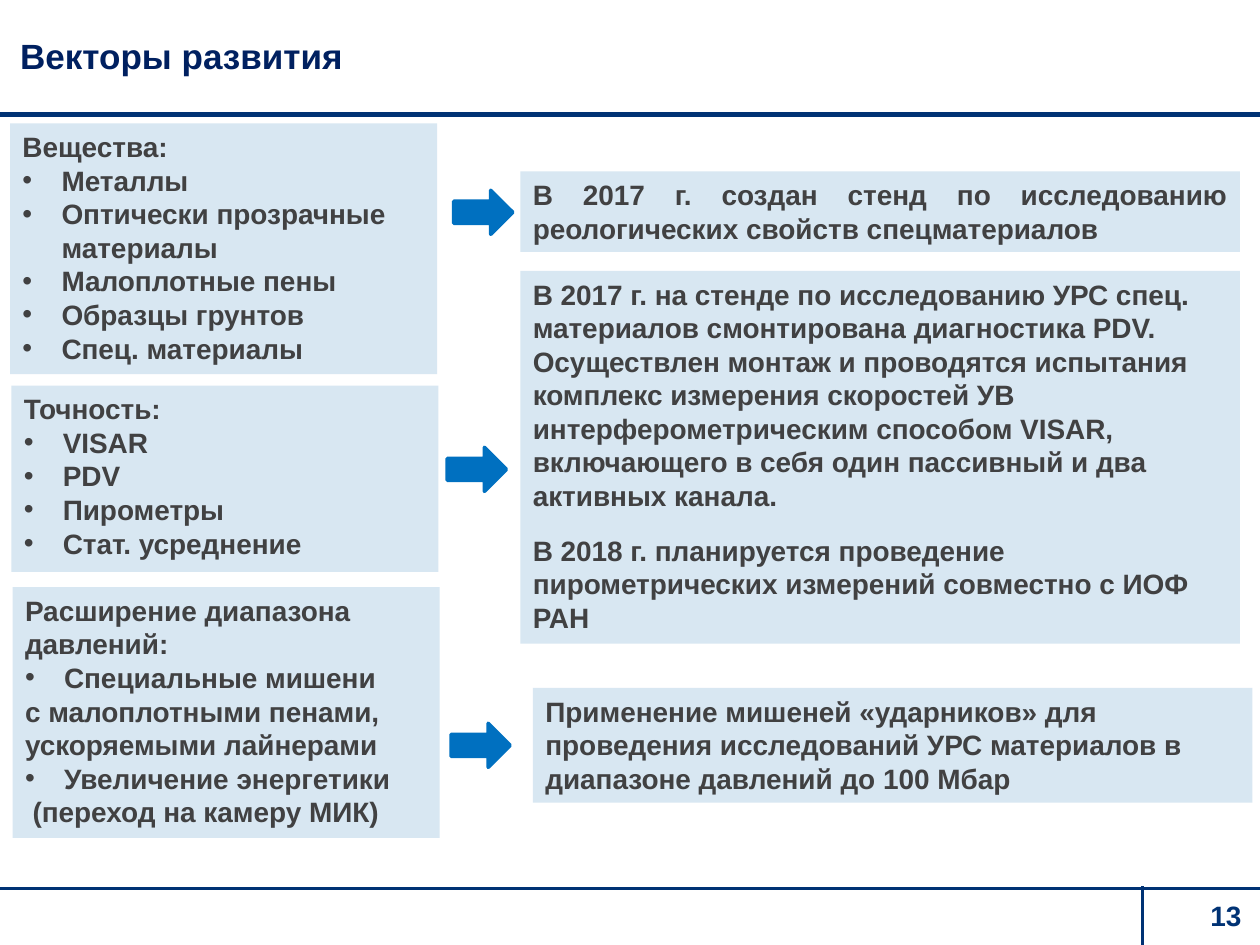
import pptx
import pptx.util
import pptx.dml.color
import pptx.enum.shapes
import pptx.enum.text
import pptx.oxml
import pptx.oxml.ns
from lxml import etree

Inches, Pt = pptx.util.Inches, pptx.util.Pt
RGBColor = pptx.dml.color.RGBColor
SHAPE = pptx.enum.shapes.MSO_SHAPE
ALIGN = pptx.enum.text.PP_ALIGN
ANCHOR = pptx.enum.text.MSO_ANCHOR
qn = pptx.oxml.ns.qn

NAVY = RGBColor(0x00, 0x32, 0x74)
TITLE = RGBColor(0x00, 0x20, 0x60)
PALE = RGBColor(0xD8, 0xE7, 0xF2)
GREY = RGBColor(0x41, 0x41, 0x42)
BLUE = RGBColor(0x00, 0x70, 0xC0)

SHADOW = (
    f'<a:effectLst {pptx.oxml.ns.nsdecls("a")}>'
    '<a:outerShdw blurRad="0" dist="25400" dir="2700000">'
    '<a:srgbClr val="8497B0"/></a:outerShdw></a:effectLst>'
)
INDENT = 0.31
LEFT_WIDTH, RIGHT_WIDTH = 3.39, 5.71

# Each line is (kind, text); kinds are "plain", "bullet" and "inset".
TOPICS = [
    (0.08, 0.98, 1.99, [
        ("plain", "Вещества:"),
        ("bullet", "Металлы"),
        ("bullet", "Оптически прозрачные материалы"),
        ("bullet", "Малоплотные пены"),
        ("bullet", "Образцы грунтов"),
        ("bullet", "Спец. материалы"),
    ]),
    (0.09, 3.06, 1.48, [
        ("plain", "Точность:"),
        ("bullet", "VISAR"),
        ("bullet", "PDV"),
        ("bullet", "Пирометры"),
        ("bullet", "Стат. усреднение"),
    ]),
    (0.1, 4.66, 1.99, [
        ("plain", "Расширение диапазона давлений:"),
        ("bullet", "Специальные мишени"),
        ("plain", "с малоплотными пенами,"),
        ("plain", "ускоряемыми лайнерами"),
        ("bullet", "Увеличение энергетики"),
        ("inset", "(переход на камеру МИК)"),
    ]),
]
RESULTS = [
    (4.13, 1.36, 0.64, ALIGN.JUSTIFY, [
        ("plain", "В 2017 г. создан стенд по исследованию реологических "
                  "свойств спецматериалов"),
    ]),
    (4.13, 2.15, 2.96, ALIGN.LEFT, [
        ("plain", "В 2017 г. на стенде по исследованию УРС спец. материалов "
                  "смонтирована диагностика PDV. Осуществлен монтаж и "
                  "проводятся испытания комплекс измерения скоростей УВ "
                  "интерферометрическим способом VISAR, включающего в себя "
                  "один пассивный и два активных канала."),
        ("plain", "В 2018 г. планируется проведение пирометрических "
                  "измерений совместно с ИОФ РАН"),
    ]),
    (4.23, 5.46, 0.91, ALIGN.LEFT, [
        ("plain", "Применение мишеней «ударников» для проведения "
                  "исследований УРС материалов в диапазоне давлений "
                  "до 100 Мбар"),
    ]),
]
ARROWS = [(3.6, 1.51), (3.55, 3.55), (3.58, 5.74)]


def set_font(font, size, color):
    font.name, font.size, font.bold = "Arial", Pt(size), True
    font.color.rgb = color


def add_rule(slide, start, end, width):
    rule = slide.shapes.add_connector(
        pptx.enum.shapes.MSO_CONNECTOR.STRAIGHT,
        *map(Inches, start), *map(Inches, end))
    rule.line.color.rgb = NAVY
    rule.line.width = Pt(width)
    etree.SubElement(rule._element.spPr, qn("a:effectLst"))


def add_title(slide, left, top, width, height):
    box = slide.shapes.add_textbox(*map(Inches, (left, top, width, height)))
    frame = box.text_frame
    frame.word_wrap = True
    frame.vertical_anchor = ANCHOR.MIDDLE
    frame.margin_left = frame.margin_right = 0
    frame.margin_top = frame.margin_bottom = 0
    para = frame.paragraphs[0]
    para.line_spacing = 0.9
    run = para.add_run()
    run.text = "Векторы развития"
    set_font(run.font, 20, TITLE)
    fill = run._r.get_or_add_rPr().find(qn("a:solidFill"))
    fill.addnext(pptx.oxml.parse_xml(SHADOW))


def add_number(slide, left, top, width, height):
    box = slide.shapes.add_textbox(*map(Inches, (left, top, width, height)))
    box.text_frame.word_wrap = True
    para = box.text_frame.paragraphs[0]
    para.text = "13"
    para.alignment = ALIGN.RIGHT
    set_font(para.font, 16, NAVY)


def indent(para, kind):
    props = para._p.get_or_add_pPr()
    if kind == "bullet":
        props.set("marL", str(Inches(INDENT)))
        props.set("indent", str(-Inches(INDENT)))
        etree.SubElement(props, qn("a:buFont"), typeface="Arial")
        etree.SubElement(props, qn("a:buChar"), char="•")
    elif kind == "inset":
        props.set("marL", str(Inches(0.06)))


def add_panel(slide, left, top, width, height, lines,
              align=ALIGN.LEFT, gap=0):
    """Add a pale box of lines, with a gap in points between paragraphs."""
    panel = slide.shapes.add_shape(
        SHAPE.RECTANGLE, *map(Inches, (left, top, width, height)))
    panel.shadow.inherit = False
    panel.fill.solid()
    panel.fill.fore_color.rgb = PALE
    panel.line.fill.background()
    frame = panel.text_frame
    frame.word_wrap = True
    frame.vertical_anchor = ANCHOR.TOP
    for index, (kind, text) in enumerate(lines):
        para = frame.add_paragraph() if index else frame.paragraphs[0]
        para.text = text
        para.alignment = align
        if gap and index < len(lines) - 1:
            para.space_after = Pt(gap)
        indent(para, kind)
        set_font(para.font, 16, GREY)


def add_arrow(slide, left, top):
    arrow = slide.shapes.add_shape(
        SHAPE.RIGHT_ARROW, *map(Inches, (left, top, 0.47, 0.35)))
    arrow.shadow.inherit = False
    arrow.fill.solid()
    arrow.fill.fore_color.rgb = BLUE
    arrow.line.color.rgb = BLUE
    arrow.line.width = Pt(2)


def add_frame(slide):
    """Add the rules, the title and the page number."""
    add_rule(slide, (0, 0.91), (10, 0.91), 3)
    add_rule(slide, (0, 7.05), (10, 7.05), 1.5)
    add_rule(slide, (9.07, 7.5), (9.07, 7.03), 1.5)
    add_title(slide, 0.16, 0.31, 8.59, 0.3)
    add_number(slide, 9.06, 7.08, 0.89, 0.37)


def main():
    deck = pptx.Presentation()
    deck.slide_width, deck.slide_height = Inches(10), Inches(7.5)
    slide = deck.slides.add_slide(deck.slide_layouts[6])
    add_frame(slide)
    for left, top, height, lines in TOPICS:
        add_panel(slide, left, top, LEFT_WIDTH, height, lines)
    for left, top, height, align, lines in RESULTS:
        add_panel(slide, left, top, RIGHT_WIDTH, height, lines, align, 12)
    for left, top in ARROWS:
        add_arrow(slide, left, top)
    deck.save("out.pptx")


if __name__ == "__main__":
    main()
